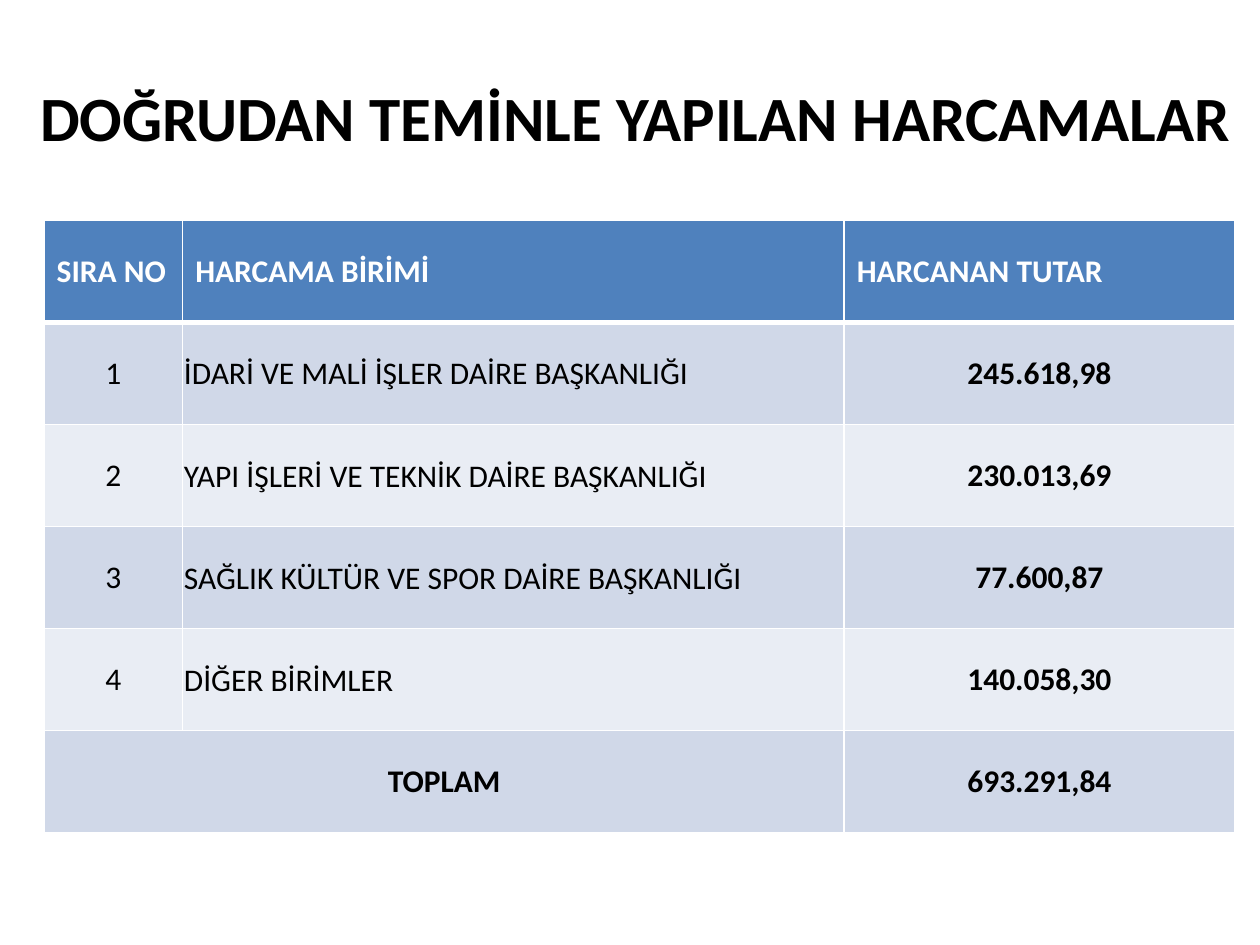
from lxml import etree
from pptx import Presentation
from pptx.dml.color import RGBColor
from pptx.enum.text import MSO_ANCHOR as Anchor, PP_ALIGN as Align
from pptx.oxml.ns import qn
from pptx.util import Inches, Pt

HEADERS = ["SIRA NO", "HARCAMA BİRİMİ", "HARCANAN TUTAR"]
SPENDING = [
    ("İDARİ VE MALİ İŞLER DAİRE BAŞKANLIĞI", "245.618,98"),
    ("YAPI İŞLERİ VE TEKNİK DAİRE BAŞKANLIĞI", "230.013,69"),
    ("SAĞLIK KÜLTÜR VE SPOR DAİRE BAŞKANLIĞI", "77.600,87"),
    ("DİĞER BİRİMLER", "140.058,30"),
]
TOTAL = ["TOPLAM", "", "693.291,84"]


def color(value):
    return RGBColor.from_string(value)


class SlideBuilder:
    font = "Calibri"
    black, white, header_fill = "000000", "FFFFFF", "4F81BD"
    bands = ["D0D8E8", "E9EDF4"]

    def __init__(self, slide):
        self.slide = slide

    def set_text(self, text_frame, text, size, ink, bold, align):
        paragraph = text_frame.paragraphs[0]
        paragraph.text = text
        paragraph.alignment = align
        font = paragraph.font
        font.name, font.size, font.bold = self.font, Pt(size), bold
        font.color.rgb = color(ink)

    def title(self, text, left, top, width, height):
        shape = self.slide.shapes.title
        shape.left, shape.top = Inches(left), Inches(top)
        shape.width, shape.height = Inches(width), Inches(height)
        shape.text_frame.vertical_anchor = Anchor.MIDDLE
        self.set_text(shape.text_frame, text, 36, self.black, True, Align.CENTER)

    def borders(self, cell, top, bottom):
        properties = cell._tc.get_or_add_tcPr()
        widths = {"a:lnL": 1, "a:lnR": 1, "a:lnT": top, "a:lnB": bottom}
        for index, (tag, width) in enumerate(widths.items()):
            line = etree.Element(qn(tag), w=str(Pt(width)))
            fill = etree.SubElement(line, qn("a:solidFill"))
            etree.SubElement(fill, qn("a:srgbClr"), val=self.white)
            properties.insert(index, line)

    def cell(self, cell, text, fill, ink, bold, align, top=1, bottom=1):
        self.borders(cell, top, bottom)
        cell.fill.solid()
        cell.fill.fore_color.rgb = color(fill)
        cell.vertical_anchor = Anchor.MIDDLE
        self.set_text(cell.text_frame, text, 18, ink, bold, align)

    def table(self, rows, left, top, column_widths, row_height):
        shape = self.slide.shapes.add_table(
            len(rows), len(column_widths), Inches(left), Inches(top),
            Inches(sum(column_widths)), Inches(row_height * len(rows)))
        table = shape.table
        for column, width in zip(table.columns, column_widths):
            column.width = Inches(width)
        last = len(rows) - 1
        for r, values in enumerate(rows):
            table.rows[r].height = Inches(row_height)
            for c, text in enumerate(values):
                cell = table.cell(r, c)
                if r == 0:
                    self.cell(cell, text, self.header_fill, self.white, True,
                              Align.LEFT, bottom=3)
                    continue
                unit_name = c == 1 and r < last
                self.cell(cell, text, self.bands[(r - 1) % 2], self.black,
                          c == 2 or r == last,
                          Align.LEFT if unit_name else Align.CENTER,
                          top=3 if r == 1 else 1)
                if unit_name:
                    cell.margin_left = cell.margin_right = Inches(0.01)
                    cell.margin_top, cell.margin_bottom = Inches(0.01), 0
        # The total label spans the number and unit columns
        table.cell(last, 0).merge(table.cell(last, 1))


def main():
    presentation = Presentation()
    presentation.slide_width, presentation.slide_height = Inches(10), Inches(7.5)
    layout = presentation.slide_layouts[5]
    builder = SlideBuilder(presentation.slides.add_slide(layout))

    # Heading
    builder.title("DOĞRUDAN TEMİNLE YAPILAN HARCAMALAR", 0.2, 0.3, 9.69, 1.25)

    # Spending by unit, with the total
    units = [[str(n), *row] for n, row in enumerate(SPENDING, 1)]
    builder.table([HEADERS, *units, TOTAL], 0.35, 1.75, [1.1, 5.25, 3.1], 0.81)

    presentation.save("out.pptx")


if __name__ == "__main__":
    main()
